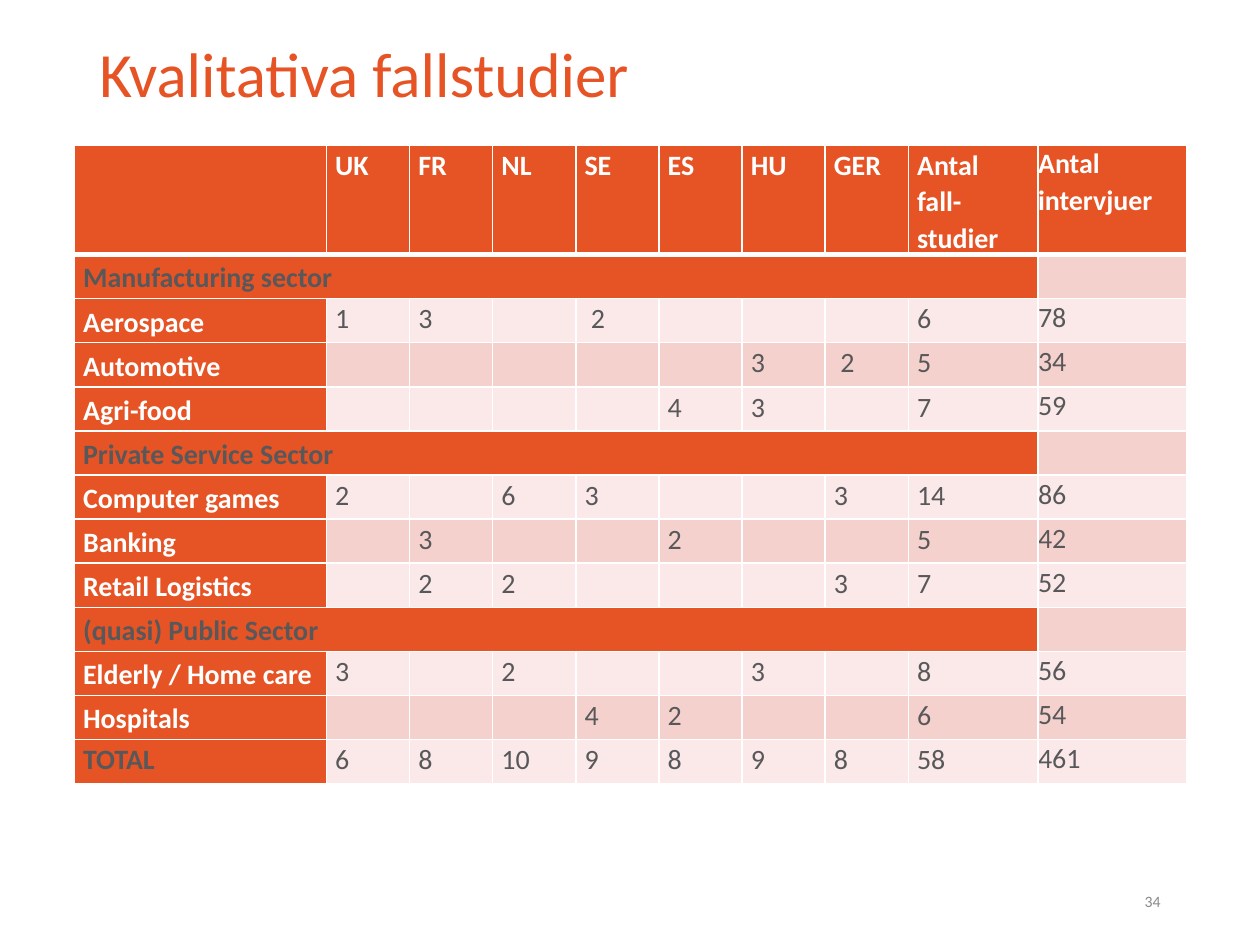
from lxml.etree import SubElement
from pptx import Presentation
from pptx.dml.color import RGBColor
from pptx.enum.text import MSO_ANCHOR, PP_ALIGN
from pptx.oxml import parse_xml
from pptx.oxml.ns import nsdecls, qn
from pptx.util import Inches, Pt

FONT = "Calibri"
COLORS = {
    "orange": "E65425",
    "grey": "58585A",
    "white": "FFFFFF",
    "band_dark": "F5D1CD",
    "band_light": "FAE9E8",
    "number": "898989",
}
COL_WIDTHS = [2] + [0.66] * 7 + [1.03, 1.18]
HEADER_HEIGHT, ROW_HEIGHT = 0.87, 0.35
LAST = len(COL_WIDTHS) - 1

# A row with a single entry is a sector heading
ROWS = [
    ["", "UK", "FR", "NL", "SE", "ES", "HU", "GER", "Antal fall-studier", "Antal intervjuer"],
    ["Manufacturing sector"],
    ["Aerospace", "1", "3", "", " 2", "", "", "", "6", "78"],
    ["Automotive", "", "", "", "", "", "3", " 2", "5", "34"],
    ["Agri-food", "", "", "", "", "4", "3", "", "7", "59"],
    ["Private Service Sector"],
    ["Computer games", "2", "", "6", "3", "", "", "3", "14", "86"],
    ["Banking", "", "3", "", "", "2", "", "", "5", "42"],
    ["Retail Logistics", "", "2", "2", "", "", "", "3", "7", "52"],
    ["(quasi) Public Sector"],
    ["Elderly / Home care", "3", "", "2", "", "", "3", "", "8", "56"],
    ["Hospitals", "", "", "", "4", "2", "", "", "6", "54"],
    ["TOTAL", "6", "8", "10", "9", "8", "9", "8", "58", "461"],
]


def rgb(name):
    return RGBColor.from_string(COLORS[name])


def add_run(p, text, size, color, bold=False):
    r = p.add_run()
    r.text = text
    r.font.name = FONT
    r.font.size = Pt(size)
    r.font.bold = bold
    r.font.color.rgb = rgb(color)


def add_text(slide, box, text, size, color, align=PP_ALIGN.LEFT, line_spacing=None):
    tf = slide.shapes.add_textbox(*map(Inches, box)).text_frame
    tf.word_wrap = True
    tf.vertical_anchor = MSO_ANCHOR.MIDDLE
    p = tf.paragraphs[0]
    p.alignment = align
    p.line_spacing = line_spacing
    add_run(p, text, size, color)


def set_borders(cell, top=1, bottom=1):
    tc_pr = cell._tc.get_or_add_tcPr()
    sides = [("lnL", 1), ("lnR", 1), ("lnT", top), ("lnB", bottom)]
    for i, (tag, width) in enumerate(sides):
        tc_pr.insert(i, parse_xml(
            f'<a:{tag} {nsdecls("a")} w="{Pt(width)}"><a:solidFill>'
            f'<a:srgbClr val="{COLORS["white"]}"/></a:solidFill></a:{tag}>'))


def fill_cell(cell, text, fill, color, bold, middle, flush):
    cell.fill.solid()
    cell.fill.fore_color.rgb = rgb(fill)
    side, top = (0, 0) if flush else (0.07, 0.01)
    cell.margin_left = cell.margin_right = Inches(side)
    cell.margin_top, cell.margin_bottom = Inches(top), 0
    cell.vertical_anchor = MSO_ANCHOR.MIDDLE if middle else MSO_ANCHOR.TOP
    p = cell.text_frame.paragraphs[0]
    p.line_spacing = 1.07
    p.space_after = Pt(8)
    if text:
        add_run(p, text, 16, color, bold)
    else:
        # Keeps an empty cell from stretching its row
        SubElement(p._p, qn("a:endParaRPr"), sz="1600")


def add_case_table(slide):
    height = HEADER_HEIGHT + ROW_HEIGHT * (len(ROWS) - 1)
    box = map(Inches, (0.59, 1.15, sum(COL_WIDTHS), height))
    table = slide.shapes.add_table(len(ROWS), len(COL_WIDTHS), *box).table
    for col, width in zip(table.columns, COL_WIDTHS):
        col.width = Inches(width)
    for i, row in enumerate(ROWS):
        table.rows[i].height = Inches(ROW_HEIGHT if i else HEADER_HEIGHT)
        sector, total = len(row) == 1, row[0] == "TOTAL"
        band = "band_dark" if i % 2 else "band_light"
        texts = row + [""] * (len(COL_WIDTHS) - len(row))
        for j, text in enumerate(texts):
            strong = i == 0 or j == 0 or (sector and j < LAST)
            fill_cell(
                table.cell(i, j), text,
                fill="orange" if strong else band,
                color="white" if strong and not (sector or total) else "grey",
                bold=strong,
                middle=(j == 0 and not total) or (i == 0 and j == LAST - 1),
                flush=j == LAST)
            set_borders(table.cell(i, j), top=3 if i == 1 else 1, bottom=1 if i else 3)
        if sector:
            table.cell(i, 0).merge(table.cell(i, LAST - 1))


def main():
    prs = Presentation()
    prs.slide_width, prs.slide_height = Inches(10), Inches(7.5)
    s = prs.slides.add_slide(prs.slide_layouts[6])

    # Title
    add_text(s, (0.69, 0.15, 8.62, 0.92), "Kvalitativa fallstudier", 36, "orange",
             line_spacing=0.9)
    # Case studies per sector and country
    add_case_table(s)
    # Slide number
    add_text(s, (7.06, 6.95, 2.25, 0.4), "34", 9, "number", PP_ALIGN.RIGHT)

    prs.save("out.pptx")


if __name__ == "__main__":
    main()
